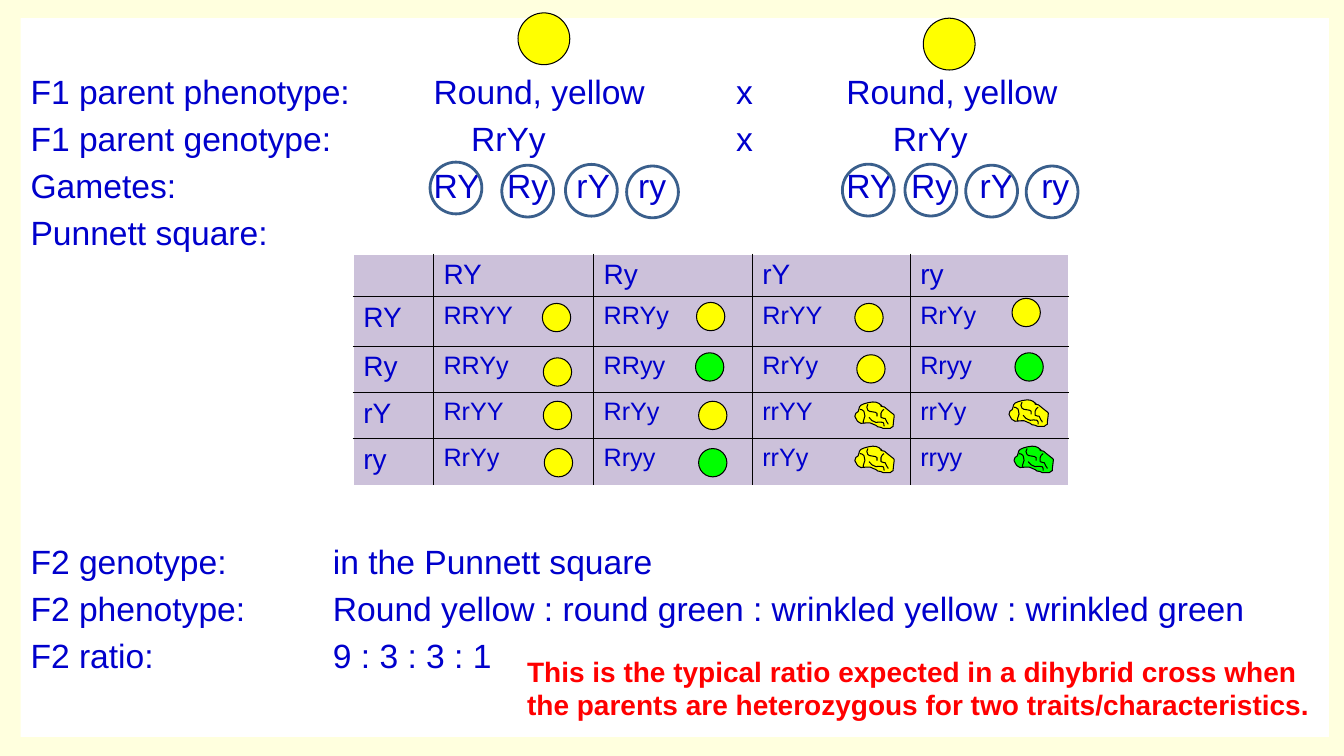
from lxml import etree
from pptx import Presentation
from pptx.dml.color import RGBColor
from pptx.enum.shapes import MSO_SHAPE
from pptx.enum.text import MSO_ANCHOR, PP_ALIGN
from pptx.oxml.ns import qn
from pptx.util import Pt

OVAL, RECTANGLE = MSO_SHAPE.OVAL, MSO_SHAPE.RECTANGLE
TOP, LEFT = MSO_ANCHOR.TOP, PP_ALIGN.LEFT

THEME = {
    "font": "Arial", "body": 24, "heading": 20, "genotype": 18,
    "cream": "FFFFDE", "white": "FFFFFF", "black": "000000", "blue": "0000CC",
    "ring": "3A5F8C", "lilac": "CCC1DA", "yellow": "FFFF00", "green": "00FF00", "red": "FF0000",
}


def paint(shape, fill, line, width=0.75):
    shape.shadow.inherit = False
    if fill:
        shape.fill.solid()
        shape.fill.fore_color.rgb = RGBColor.from_string(THEME[fill])
    else:
        shape.fill.background()
    if line:
        shape.line.color.rgb = RGBColor.from_string(THEME[line])
        shape.line.width = Pt(width)
    else:
        shape.line.fill.background()


def write(paragraph, text, size, color, bold=False):
    paragraph.text = text
    paragraph.alignment = LEFT
    for run in paragraph.runs:
        run.font.name = THEME["font"]
        run.font.size = Pt(THEME[size])
        run.font.bold = bold
        run.font.color.rgb = RGBColor.from_string(THEME[color])


prs = Presentation()
prs.slide_width, prs.slide_height = Pt(960), Pt(540)
slide = prs.slides.add_slide(prs.slide_layouts[6])
slide.background.fill.solid()
slide.background.fill.fore_color.rgb = RGBColor.from_string(THEME["cream"])

cross = slide.shapes.add_shape(RECTANGLE, Pt(14.7), Pt(13), Pt(934.6), Pt(513.4))
paint(cross, "white", None)
cross.text_frame.word_wrap = True
cross.text_frame.vertical_anchor = TOP
cross.text_frame.margin_top = Pt(37.3)

CROSS_LINES = [
    ("F1 parent phenotype:\tRound, yellow\tx\tRound, yellow", (288, 504, 582.7), 0),
    ("F1 parent genotype:\tRrYy\tx\tRrYy", (314.7, 504, 616), 4.8),
    ("Gametes:\tRY\tRy\trY\try\tRY\tRy\trY\try",
     (288, 340.5, 390, 434, 582.7, 629, 678, 722), 4.8),
    ("Punnett square:", (), 4.8),
    ("F2 genotype:\tin the Punnett square", (216,), 206.2),
    ("F2 phenotype:\tRound yellow : round green : wrinkled yellow : wrinkled green", (216,), 4.8),
    ("F2 ratio:\t9 : 3 : 3 : 1", (216,), 4.8),
]
for index, (line, stops, gap) in enumerate(CROSS_LINES):
    paragraph = cross.text_frame.paragraphs[0] if index == 0 else cross.text_frame.add_paragraph()
    if stops:
        tabs = etree.SubElement(paragraph._p.get_or_add_pPr(), qn("a:tabLst"))
        for stop in stops:
            etree.SubElement(tabs, qn("a:tab"), pos=str(Pt(stop)), algn="l")
    paragraph.space_before = Pt(gap)
    write(paragraph, line, "body", "blue")

for left, top in ((659.5, 13), (370, 9.2)):
    parent_pea = slide.shapes.add_shape(OVAL, Pt(left), Pt(top), Pt(37), Pt(37))
    paint(parent_pea, "yellow", "black")

GAMETES = [
    (307.2, 115.8), (358.4, 118), (403.9, 117.4), (447.6, 118.6),
    (601.7, 117.3), (646.4, 117.3), (689.8, 118), (733, 118.6),
]
for left, top in GAMETES:
    gamete = slide.shapes.add_shape(OVAL, Pt(left), Pt(top), Pt(37), Pt(37))
    paint(gamete, None, "ring", 2)

PUNNETT = [
    ["", "RY", "Ry", "rY", "ry"],
    ["RY", "RRYY", "RRYy", "RrYY", "RrYy"],
    ["Ry", "RRYy", "RRyy", "RrYy", "Rryy"],
    ["rY", "RrYY", "RrYy", "rrYY", "rrYy"],
    ["ry", "RrYy", "Rryy", "rrYy", "rryy"],
]
LAST = len(PUNNETT) - 1
punnett = slide.shapes.add_table(5, 5, Pt(252.3), Pt(181.6), Pt(510.7), Pt(165.5)).table
for column, width in zip(punnett.columns, (57.3, 114.4, 113.4, 112.8, 112.8)):
    column.width = Pt(width)
for row, height in zip(punnett.rows, (30.3, 35.6, 33, 33, 33.6)):
    row.height = Pt(height)
for r, alleles in enumerate(PUNNETT):
    for c, allele in enumerate(alleles):
        cell = punnett.cell(r, c)
        write(cell.text_frame.paragraphs[0], allele, "genotype" if r and c else "heading", "blue")
        properties = cell._tc.get_or_add_tcPr()
        for side, outer in (("L", c == 0), ("R", c == LAST), ("T", r == 0), ("B", r == LAST)):
            border = etree.SubElement(properties, qn(f"a:ln{side}"), w=str(Pt(1)))
            solid = etree.SubElement(border, qn("a:solidFill"))
            etree.SubElement(solid, qn("a:srgbClr"), val=THEME["white" if outer else "black"])
        cell.fill.solid()
        cell.fill.fore_color.rgb = RGBColor.from_string(THEME["lilac"])

ROUND_PEAS = {
    "yellow": [(387.4, 216.7), (497.5, 216), (610.6, 216.7), (722.9, 213.1), (388.1, 255.6),
               (612, 253.4), (388.1, 286.6), (499, 286.6), (388.8, 320.4)],
    "green": [(496.8, 252), (725, 252), (499, 320.4)],
}
for color, places in ROUND_PEAS.items():
    for left, top in places:
        round_pea = slide.shapes.add_shape(OVAL, Pt(left), Pt(top), Pt(20.2), Pt(20.2))
        paint(round_pea, color, "black")

SKIN = [
    (27, 5), (25, 3), (23, 1), (21, 1), (18, 0), (9, 2), (6, 4), (5, 5), (4, 6), (4, 8),
    (3, 11), (4, 10), (1, 12), (1, 13), (0, 14), (0, 15), (0, 16), (0, 16), (1, 17),
    (3, 21), (3, 20), (6, 22), (18, 21), (13, 21), (21, 24), (23, 26), (22, 25), (26, 26),
    (27, 27), (29, 27), (29, 27), (31, 27), (33, 27), (35, 27), (36, 26), (38, 25), (38, 25),
    (38, 21), (39, 17), (39, 14), (39, 13), (38, 13), (37, 12), (35, 11), (34, 9), (32, 8),
    (30, 5), (29, 6), (26, 5), (26, 3), (25, 3), (27, 5),
]
FOLDS = [
    [(13, 3), (12, 5), (11, 7), (13, 9), (14, 11), (21, 10), (22, 12), (22, 13), (22, 14), (22, 15)],
    [(29, 8), (27, 9), (27, 10), (26, 12), (26, 13), (26, 15), (26, 16), (27, 17), (30, 17),
     (30, 17), (31, 19), (31, 20), (32, 21), (33, 21), (33, 23), (33, 23)],
    [(9, 22), (8, 20), (8, 21), (9, 18), (9, 17), (10, 15), (10, 15), (9, 13), (10, 11), (9, 10),
     (5, 6), (5, 10), (5, 8)],
    [(14, 16), (16, 19), (18, 20), (21, 21), (23, 21), (26, 20), (28, 21), (29, 21), (29, 24), (29, 25)],
]
WRINKLED_PEAS = [
    (610.6, 286.6, "yellow"), (610.6, 318.2, "yellow"),
    (720.7, 285.1, "yellow"), (724.3, 318.2, "green"),
]
for left, top, color in WRINKLED_PEAS:
    wrinkled_pea = slide.shapes.add_group_shape()
    for curve in [SKIN, *FOLDS]:
        builder = wrinkled_pea.shapes.build_freeform(*curve[0], scale=Pt(0.72))
        builder.add_line_segments(curve[1:], close=curve is SKIN)
        wrinkle = builder.convert_to_shape(Pt(left), Pt(top))
        paint(wrinkle, color if curve is SKIN else None, "black")
        segments = list(wrinkle._element.iter(qn("a:lnTo")))
        for start in range(0, len(segments), 3):
            bend = segments[start]
            bend.tag = qn("a:cubicBezTo")
            for segment in segments[start + 1:start + 3]:
                bend.append(segment[0])
                segment.getparent().remove(segment)

remark = slide.shapes.add_textbox(Pt(369.4), Pt(463.7), Pt(576), Pt(55.4))
remark.text_frame.word_wrap = True
write(remark.text_frame.paragraphs[0],
      "This is the typical ratio expected in a dihybrid cross when the parents are "
      "heterozygous for two traits/characteristics.", "heading", "red", True)

prs.save("out.pptx")
